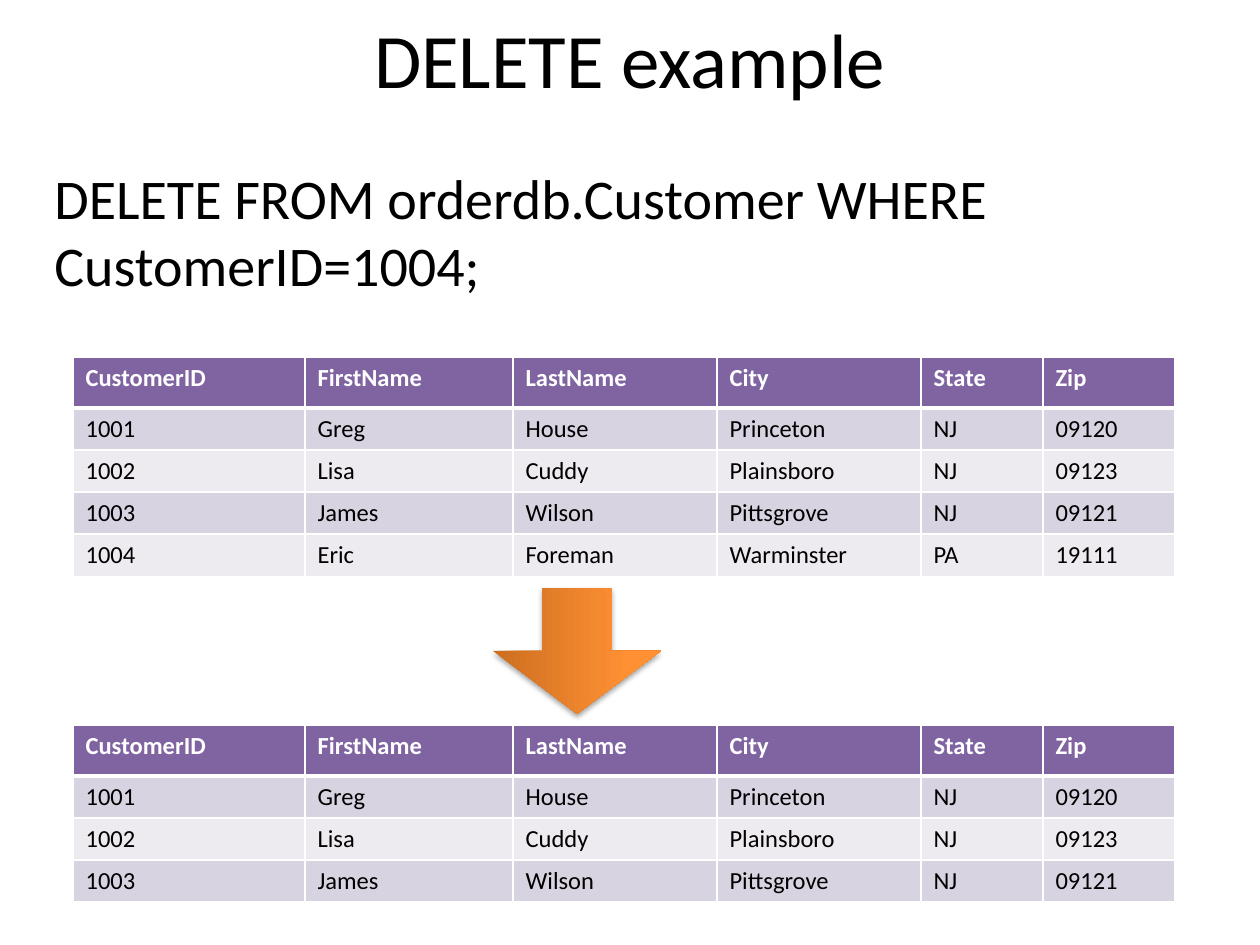
from pptx import Presentation
from pptx.dml.color import RGBColor
from pptx.enum.shapes import MSO_SHAPE
from pptx.enum.text import MSO_ANCHOR, PP_ALIGN
from pptx.oxml import parse_xml
from pptx.oxml.ns import nsdecls
from pptx.util import Pt

RIGHT_ARROW = MSO_SHAPE.RIGHT_ARROW
TOP, MIDDLE = MSO_ANCHOR.TOP, MSO_ANCHOR.MIDDLE
LEFT, CENTER = PP_ALIGN.LEFT, PP_ALIGN.CENTER
SCALE = 914400 / 126
HEADER_FILL, BAND_FILLS = "8064A2", ["D8D3E0", "EDEAF0"]
BLACK, WHITE = "000000", "FFFFFF"


def px(length):
    return round(length * SCALE)


def style(para, size, color, bold=False):
    for span in para.runs:
        span.font.name = "Calibri"
        span.font.size = Pt(size)
        span.font.bold = bold
        span.font.color.rgb = RGBColor.from_string(color)


deck = Presentation()
deck.slide_width, deck.slide_height = px(1260), px(945)
page = deck.slides.add_slide(deck.slide_layouts[6])

texts = [
    ("DELETE example", 63, 0, 116, 44, MIDDLE, CENTER),
    ("DELETE FROM orderdb.Customer WHERE CustomerID=1004;", 42, 157, 624, 32, TOP, LEFT),
]
for text, left, top, height, size, anchor, align in texts:
    box = page.shapes.add_textbox(px(left), px(top), px(1134), px(height))
    box.text_frame.word_wrap = True
    box.text_frame.vertical_anchor = anchor
    box.text_frame.text = text
    para = box.text_frame.paragraphs[0]
    para.alignment = align
    style(para, size, BLACK)

headings = ["CustomerID", "FirstName", "LastName", "City", "State", "Zip"]
customers = [
    ["1001", "Greg", "House", "Princeton", "NJ", "09120"],
    ["1002", "Lisa", "Cuddy", "Plainsboro", "NJ", "09123"],
    ["1003", "James", "Wilson", "Pittsgrove", "NJ", "09121"],
    ["1004", "Eric", "Foreman", "Warminster", "PA", "19111"],
]
column_widths = [232, 208, 204, 204, 122, 132]
header_height, row_height = 51, 42

for top, remaining in [(357, customers), (725, customers[:3])]:
    rows = [headings] + remaining
    height = header_height + row_height * len(remaining)
    frame = page.shapes.add_table(
        len(rows), len(headings), px(73), px(top), px(sum(column_widths)), px(height))
    table = frame.table
    for column, width in zip(table.columns, column_widths):
        column.width = px(width)
    for r, values in enumerate(rows):
        is_header = r == 0
        table.rows[r].height = px(header_height if is_header else row_height)
        fill = HEADER_FILL if is_header else BAND_FILLS[(r - 1) % 2]
        borders = {"lnL": 1, "lnR": 1, "lnT": 3 if r == 1 else 1, "lnB": 3 if is_header else 1}
        for c, value in enumerate(values):
            cell = table.cell(r, c)
            cell.text = value
            style(cell.text_frame.paragraphs[0], 14, WHITE if is_header else BLACK, is_header)
            properties = cell._tc.get_or_add_tcPr()
            for side, weight in borders.items():
                properties.append(parse_xml(
                    f'<a:{side} {nsdecls("a")} w="{Pt(weight)}"><a:solidFill>'
                    f'<a:srgbClr val="{WHITE}"/></a:solidFill></a:{side}>'))
            cell.fill.solid()
            cell.fill.fore_color.rgb = RGBColor.from_string(fill)

arrow = page.shapes.add_shape(RIGHT_ARROW, px(514), px(567), px(126), px(168))
arrow.rotation = 90
arrow.adjustments[0] = 0.416
arrow.adjustments[1] = 0.5
arrow.line.fill.background()
stops = "".join(
    f'<a:gs pos="{position * 1000}"><a:srgbClr val="{color}"/></a:gs>'
    for position, color in [(0, "CC6E20"), (80, "FF9034"), (100, "FF9136")])
arrow_properties = arrow._element.spPr
arrow_properties.insert(2, parse_xml(
    f'<a:gradFill {nsdecls("a")} rotWithShape="1"><a:gsLst>{stops}</a:gsLst>'
    '<a:lin ang="16200000" scaled="0"/></a:gradFill>'))
arrow_properties.append(parse_xml(
    f'<a:effectLst {nsdecls("a")}><a:outerShdw blurRad="{Pt(3.1)}" dist="{Pt(1.8)}" '
    f'dir="5400000" rotWithShape="0"><a:srgbClr val="{BLACK}"><a:alpha val="35000"/>'
    '</a:srgbClr></a:outerShdw></a:effectLst>'))

deck.save("out.pptx")
